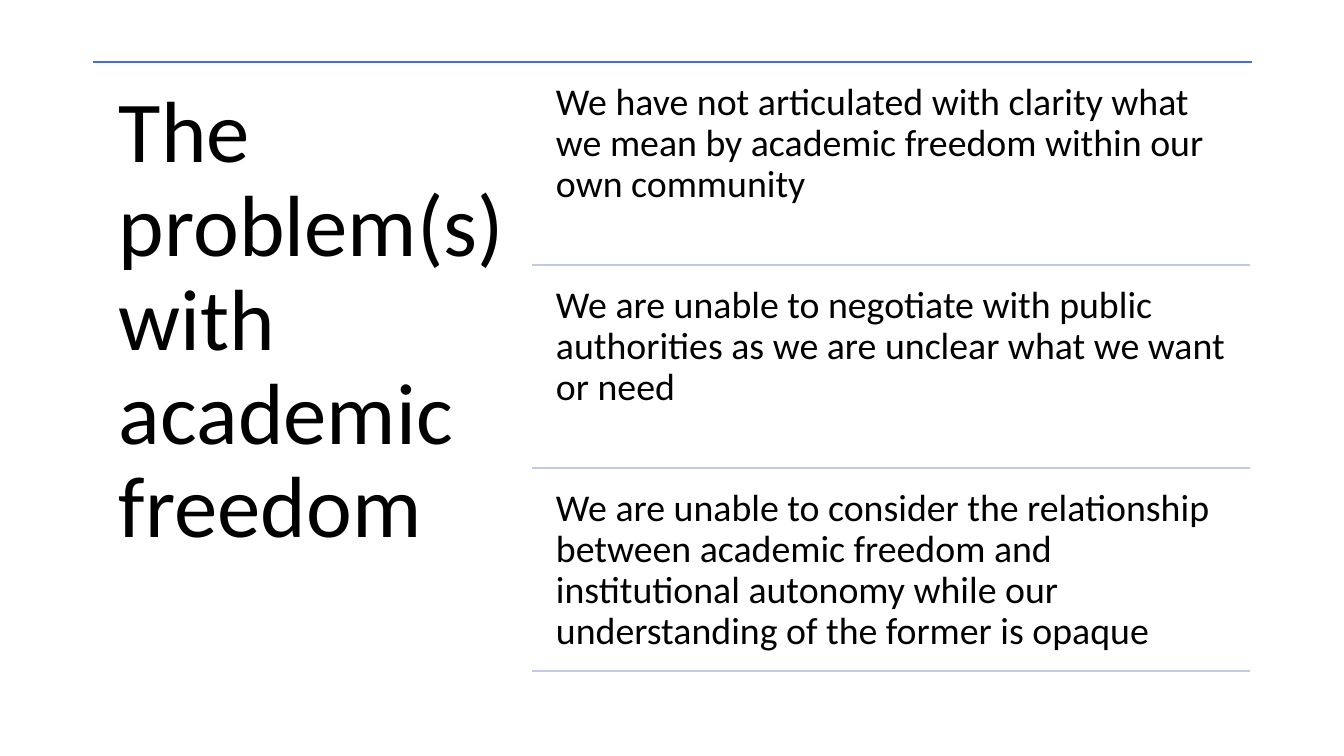
from lxml.etree import SubElement
from pptx import Presentation
from pptx.dml.color import RGBColor
from pptx.enum.shapes import MSO_CONNECTOR
from pptx.enum.text import MSO_ANCHOR, MSO_AUTO_SIZE, PP_ALIGN
from pptx.oxml.ns import qn
from pptx.util import Pt

PX = 914400 / 100.8
COLOURS = {"text": "000000", "top rule": "4472C4", "row rule": "C1C9E4"}
PROBLEMS = [
    "We have not articulated with clarity what we mean by academic freedom within our own community",
    "We are unable to negotiate with public authorities as we are unclear what we want or need",
    "We are unable to consider the relationship between academic freedom and institutional autonomy "
    "while our understanding of the former is opaque",
]
TOP = 62
ROW_HEIGHT = 203


def add_rule(left, right, y, colour):
    start, end, height = (round(value * PX) for value in (left, right, y))
    rule = slide.shapes.add_connector(MSO_CONNECTOR.STRAIGHT, start, height, end, height)
    rule.line.color.rgb = RGBColor.from_string(COLOURS[colour])
    rule.line.width = Pt(1)
    SubElement(rule._element.spPr, qn("a:effectLst"))


def write_text(shape, text, size, inset):
    frame = shape.text_frame
    frame.word_wrap = True
    frame.auto_size = MSO_AUTO_SIZE.NONE
    frame.vertical_anchor = MSO_ANCHOR.TOP
    frame.margin_left = frame.margin_right = round(inset * PX)
    frame.margin_top = frame.margin_bottom = round(inset * PX)
    paragraph = frame.paragraphs[0]
    paragraph.alignment = PP_ALIGN.LEFT
    paragraph.line_spacing = 0.9
    run = paragraph.add_run()
    run.text = text
    run.font.size = Pt(size)
    run.font.name = "Calibri"
    run.font.color.rgb = RGBColor.from_string(COLOURS["text"])


presentation = Presentation()
presentation.slide_width = round(1344 * PX)
presentation.slide_height = round(756 * PX)
slide = presentation.slides.add_slide(presentation.slide_layouts[5])

# Top rule and title
add_rule(93, 1252, TOP, "top rule")
title = slide.shapes.title
title.left, title.top, title.width, title.height = (
    round(value * PX) for value in (93, TOP, 439, 619)
)
write_text(title, "The problem(s) with academic freedom", 62, 26)

# Problems, each closed by a rule
for row, problem in enumerate(PROBLEMS):
    row_top = TOP + row * ROW_HEIGHT
    box = slide.shapes.add_textbox(
        *(round(value * PX) for value in (545, row_top + 10, 705, 193))
    )
    write_text(box, problem, 27, 11)
    add_rule(532, 1250, row_top + ROW_HEIGHT, "row rule")

presentation.save("out.pptx")
